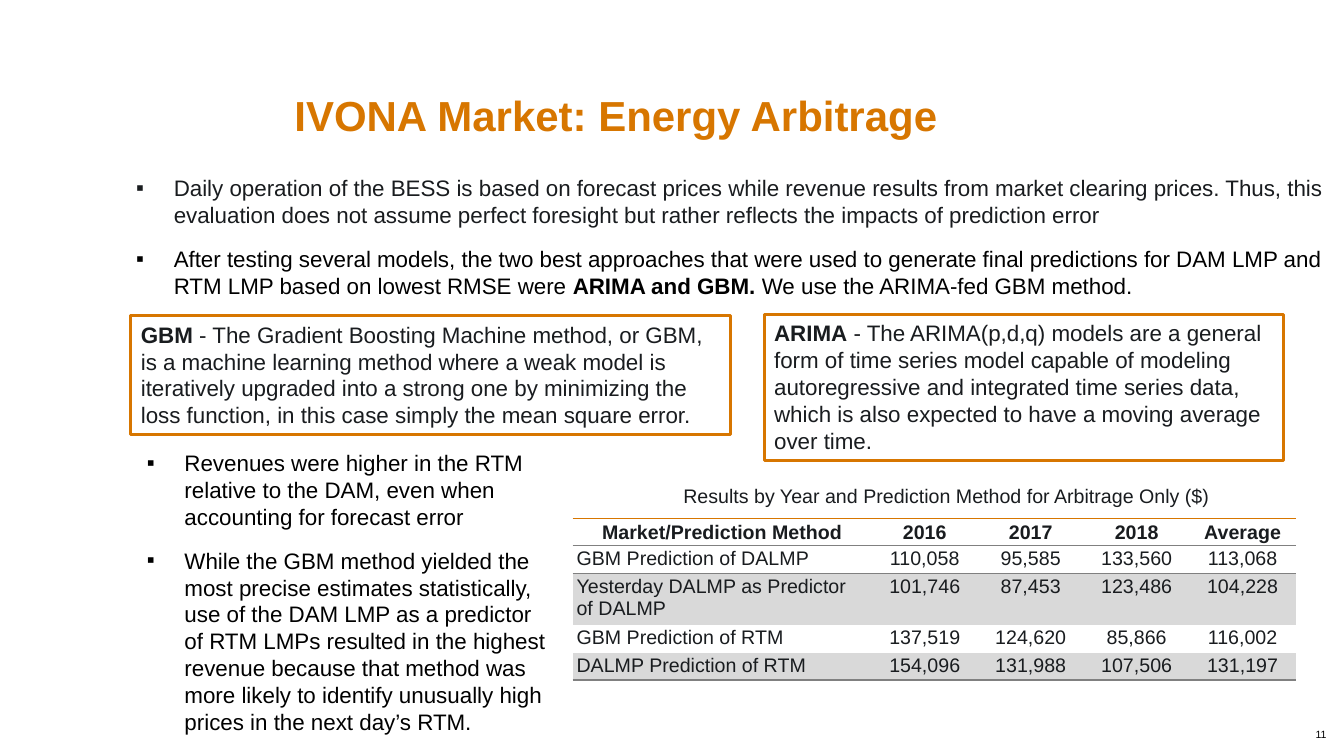
import lxml.etree
import pptx
import pptx.dml.color
import pptx.enum.shapes
import pptx.enum.text
import pptx.oxml.ns
import pptx.util

Cm = pptx.util.Cm
Pt = pptx.util.Pt
RGBColor = pptx.dml.color.RGBColor
ALIGN = pptx.enum.text.PP_ALIGN
ANCHOR = pptx.enum.text.MSO_ANCHOR
qn = pptx.oxml.ns.qn

ORANGE = RGBColor(0xD7, 0x76, 0x00)
INK = RGBColor(0x19, 0x1C, 0x1F)
BLACK = RGBColor(0, 0, 0)
WHITE = RGBColor(255, 255, 255)
BAND = RGBColor(0xD9, 0xD9, 0xD9)
RULE = RGBColor(0x80, 0x80, 0x80)

TITLE = "IVONA Market: Energy Arbitrage"
CAPTION = "Results by Year and Prediction Method for Arbitrage Only ($)"
PAGE_NUMBER = "11"
BULLET_BOXES = [
    ((3.18, 4.27, 30.68, 10.69), [
        (INK, [("Daily operation of the BESS is based on forecast prices while revenue results from "
                "market clearing prices. Thus, this evaluation does not assume perfect foresight but "
                "rather reflects the impacts of prediction error", False)]),
        (BLACK, [("After testing several models, the two best approaches that were used to generate "
                  "final predictions for DAM LMP and RTM LMP based on lowest RMSE were ", False),
                 ("ARIMA and GBM. ", True),
                 ("We use the ARIMA-fed GBM method.", False)]),
    ]),
    ((3.45, 11.2, 10.72, 7.52), [
        (BLACK, [("Revenues were higher in the RTM relative to the DAM, even when accounting for "
                  "forecast error", False)]),
        (BLACK, [("While the GBM method yielded the most precise estimates statistically, use of the "
                  "DAM LMP as a predictor of RTM LMPs resulted in the highest revenue because that "
                  "method was more likely to identify unusually high prices in the next day’s RTM.",
                  False)]),
    ]),
]
METHOD_BOXES = [
    ((3.3, 7.96, 15.11, 3.0), [
        ("GBM", True),
        (" - The Gradient Boosting Machine method, or GBM, is a machine learning method where a weak "
         "model is iteratively upgraded into a strong one by minimizing the loss function, in this "
         "case simply the mean square error.", False)]),
    ((19.26, 7.92, 13.08, 3.69), [
        ("ARIMA", True),
        (" - The ARIMA(p,d,q) models are a general form of time series model capable of modeling "
         "autoregressive and integrated time series data, which is also expected to have a moving "
         "average over time.", False)]),
]
RESULTS = [
    ("Market/Prediction Method", "2016", "2017", "2018", "Average"),
    ("GBM Prediction of DALMP", "110,058", "95,585", "133,560", "113,068"),
    ("Yesterday DALMP as Predictor of DALMP", "101,746", "87,453", "123,486", "104,228"),
    ("GBM Prediction of RTM", "137,519", "124,620", "85,866", "116,002"),
    ("DALMP Prediction of RTM", "154,096", "131,988", "107,506", "131,197"),
]
COLUMN_WIDTHS = [7.54] + [2.67] * 4
ROW_HEIGHTS = [0.69, 0.7, 1.29, 0.7, 0.69]
NO_GRID_STYLE = "{2D5ABB26-0587-4C30-8999-92F81FD0307C}"


def style(paragraph, size, color, bold=None, align=ALIGN.LEFT):
    """Set the font and alignment of a paragraph."""
    paragraph.alignment = align
    paragraph.font.name = "Arial"
    paragraph.font.size = Pt(size)
    paragraph.font.color.rgb = color
    paragraph.font.bold = bold


def add_runs(paragraph, runs):
    """Append (text, bold) runs to a paragraph."""
    for text, bold in runs:
        run = paragraph.add_run()
        run.text = text
        run.font.bold = bold


def add_text_box(slide, box):
    """Add a wrapping text box and return its text frame."""
    frame = slide.shapes.add_textbox(*map(Cm, box)).text_frame
    frame.word_wrap = True
    return frame


def add_bullets(slide, box, items):
    """Add a text box of square-bulleted paragraphs."""
    frame = add_text_box(slide, box)
    for index, (color, runs) in enumerate(items):
        paragraph = frame.add_paragraph() if index else frame.paragraphs[0]
        paragraph.space_before = Pt(6 if index else 0)
        paragraph.space_after = Pt(6)
        properties = paragraph._p.get_or_add_pPr()
        properties.set("marL", str(Cm(0.95)))
        properties.set("indent", str(-Cm(0.95)))
        lxml.etree.SubElement(properties, qn("a:buFont"), typeface="Arial")
        lxml.etree.SubElement(properties, qn("a:buChar"), char="▪")
        style(paragraph, 16, color)
        add_runs(paragraph, runs)


def add_method_box(slide, box, runs):
    """Add an outlined box that defines one method."""
    shape = slide.shapes.add_shape(pptx.enum.shapes.MSO_SHAPE.RECTANGLE, *map(Cm, box))
    shape.shadow.inherit = False
    shape.fill.solid()
    shape.fill.fore_color.rgb = WHITE
    shape.line.color.rgb = ORANGE
    shape.line.width = Pt(2.25)
    frame = shape.text_frame
    frame.word_wrap = True
    frame.vertical_anchor = ANCHOR.TOP
    style(frame.paragraphs[0], 16, INK)
    add_runs(frame.paragraphs[0], runs)


def add_border(cell, side, color):
    """Draw a one-point line on the top or bottom of a cell."""
    line = lxml.etree.Element(qn("a:ln" + side), w=str(Pt(1)))
    fill = lxml.etree.SubElement(line, qn("a:solidFill"))
    lxml.etree.SubElement(fill, qn("a:srgbClr"), val=str(color))
    properties = cell._tc.get_or_add_tcPr()
    properties.insert(len(properties.findall(qn("a:lnT"))), line)


def add_results(slide):
    """Add the table of revenues by method and year."""
    graphic = slide.shapes.add_table(len(RESULTS), len(COLUMN_WIDTHS), Cm(14.43), Cm(13.06),
                                     Cm(sum(COLUMN_WIDTHS)), Cm(sum(ROW_HEIGHTS)))
    table = graphic.table
    table.first_row = table.horz_banding = False
    next(graphic.element.iter(qn("a:tableStyleId"))).text = NO_GRID_STYLE
    for column, width in zip(table.columns, COLUMN_WIDTHS):
        column.width = Cm(width)
    for row, height in zip(table.rows, ROW_HEIGHTS):
        row.height = Cm(height)
    last = len(RESULTS) - 1
    for i, values in enumerate(RESULTS):
        for j, value in enumerate(values):
            cell = table.cell(i, j)
            cell.text = value
            cell.margin_left = cell.margin_right = Cm(0.1)
            cell.margin_top = cell.margin_bottom = Cm(0.05)
            cell.vertical_anchor = ANCHOR.TOP if i else ANCHOR.BOTTOM
            align = ALIGN.LEFT if i and j == 0 else ALIGN.CENTER
            style(cell.text_frame.paragraphs[0], 14, INK, i == 0, align)
            if i and i % 2 == 0:
                cell.fill.solid()
                cell.fill.fore_color.rgb = BAND
            else:
                cell.fill.background()
            if i == 0:
                add_border(cell, "T", ORANGE)
            if i == 1:
                add_border(cell, "T", RULE)
            if i in (0, last):
                add_border(cell, "B", RULE)


def main():
    """Build the energy arbitrage slide."""
    presentation = pptx.Presentation()
    presentation.slide_width, presentation.slide_height = Cm(33.87), Cm(19.05)
    slide = presentation.slides.add_slide(presentation.slide_layouts[5])

    title = slide.shapes.title
    title.left, title.top, title.width, title.height = map(Cm, (7.42, 0.64, 25.4, 3.02))
    frame = title.text_frame
    frame.text = TITLE
    frame.auto_size = pptx.enum.text.MSO_AUTO_SIZE.NONE
    frame.vertical_anchor = ANCHOR.BOTTOM
    frame.margin_left = 0
    frame.paragraphs[0].line_spacing = 0.9
    style(frame.paragraphs[0], 30, ORANGE, True)

    for box, items in BULLET_BOXES:
        add_bullets(slide, box, items)
    for box, runs in METHOD_BOXES:
        add_method_box(slide, box, runs)
    add_results(slide)

    caption = add_text_box(slide, (16.97, 12.06, 13.84, 0.86))
    caption.word_wrap = False
    caption.text = CAPTION
    style(caption.paragraphs[0], 14, INK)

    number = add_text_box(slide, (32.39, 17.98, 1.04, 1.07))
    number.margin_left = number.margin_right = number.margin_top = number.margin_bottom = 0
    number.vertical_anchor = ANCHOR.MIDDLE
    number.text = PAGE_NUMBER
    style(number.paragraphs[0], 7.5, BLACK, align=ALIGN.RIGHT)

    presentation.save("out.pptx")


if __name__ == "__main__":
    main()
